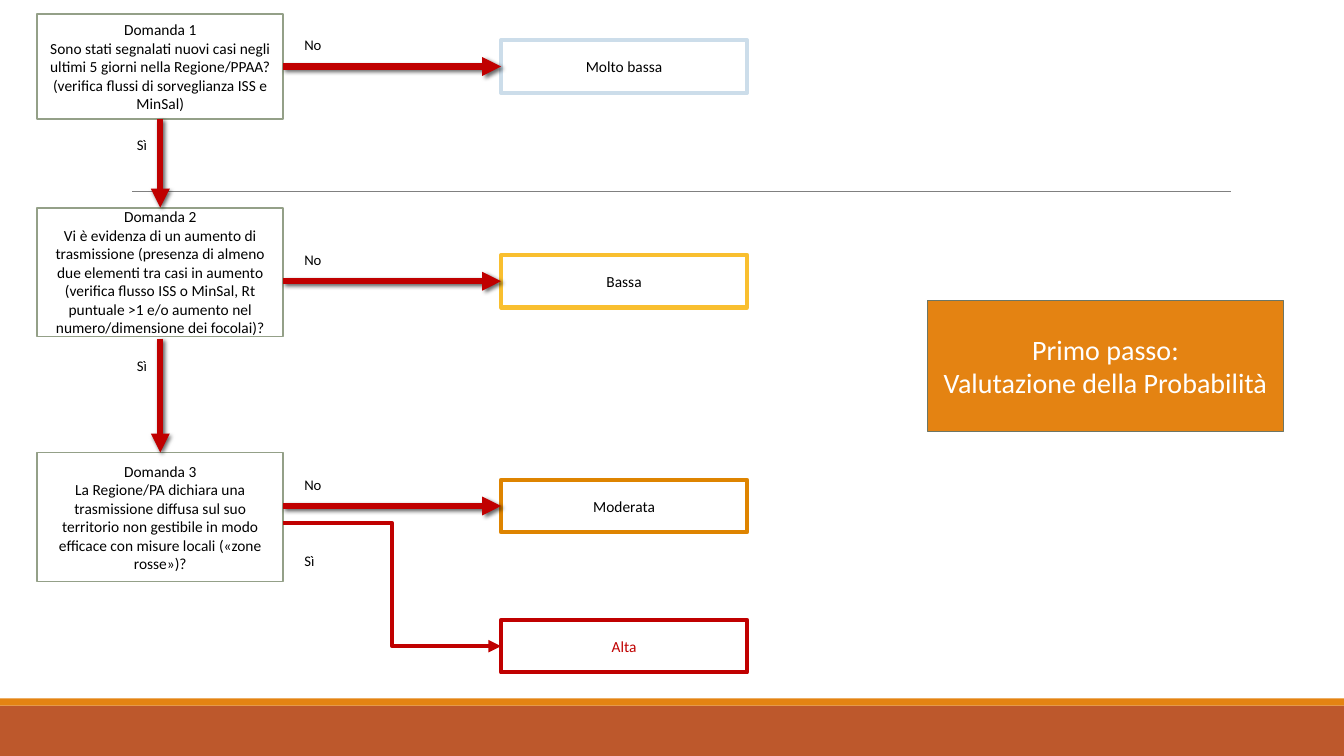
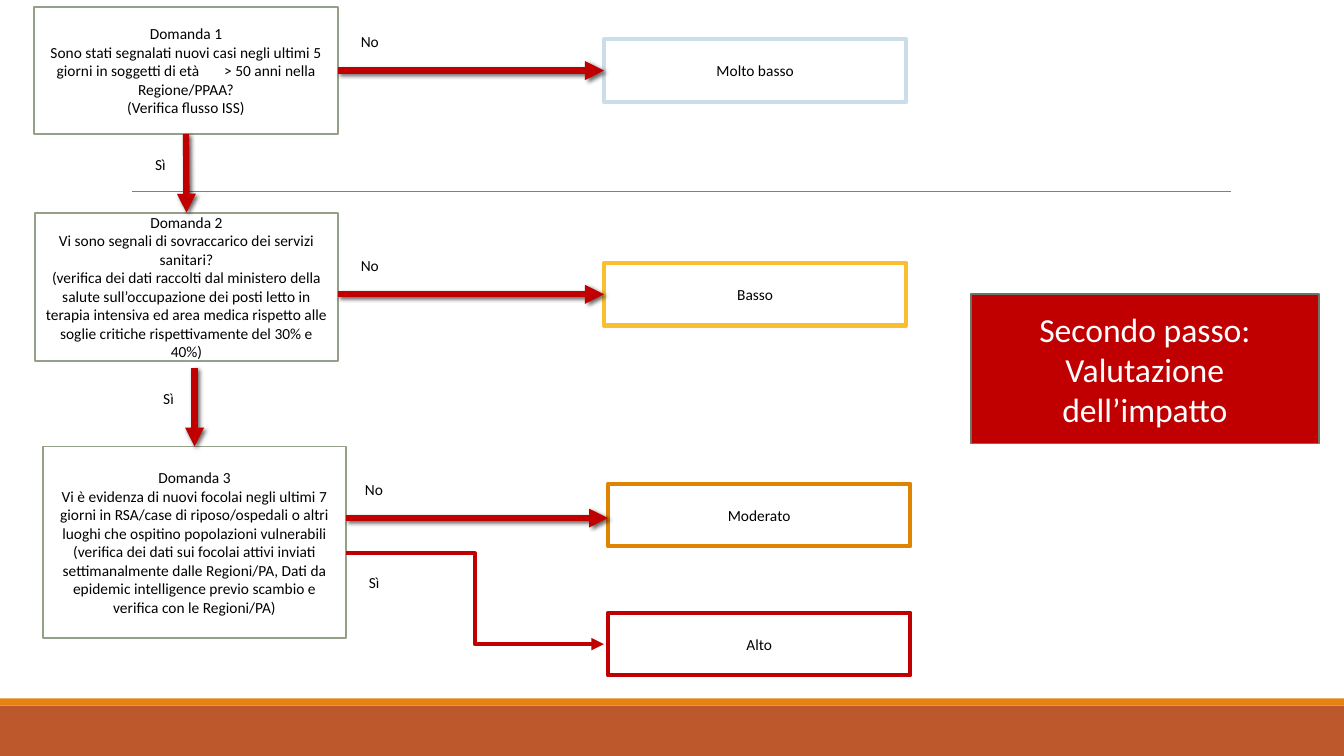
from lxml import etree
from pptx import Presentation
from pptx.dml.color import RGBColor
from pptx.enum.shapes import MSO_CONNECTOR as LINK, MSO_SHAPE as PRESET
from pptx.enum.text import MSO_ANCHOR as ANCHOR, MSO_AUTO_SIZE as FIT, PP_ALIGN as ALIGN
from pptx.oxml.ns import qn
from pptx.util import Emu, Pt

SCALE = 9144  # EMU in one px, 100 px to the inch
WIDTH, HEIGHT = 1333, 750
FONT = "Calibri"
GAP = " "  # a run of its own, widened by letter spacing
COLORS = {
    "white": "FFFFFF", "black": "000000", "red": "C00000",
    "orange": "E48312", "rust": "BD582C", "rule": "808080",
    "question": "94A088", "heading_edge": "6D7665",
    "very_low": "CCDDEA", "low": "F9BF2F", "moderate": "DE8400",
}
LEVELS = ("very_low", "low", "moderate", "red")

PROBABILITY = {
    "heading": {"box": (920, 298, 353, 130), "fill": "orange", "size": 20,
                "text": ("Primo passo:", "Valutazione della Probabilità")},
    "questions": (
        ((37, 14, 244, 104),
         ("Domanda 1",
          "Sono stati segnalati nuovi casi negli ultimi 5 giorni nella Regione/PPAA?",
          "(verifica flussi di sorveglianza ISS e MinSal)")),
        ((37, 206, 244, 128),
         ("Domanda 2",
          "Vi è evidenza di un aumento di trasmissione (presenza di almeno due elementi "
          "tra casi in aumento (verifica flusso ISS o MinSal, Rt puntuale >1 e/o aumento "
          "nel numero/dimensione dei focolai)?")),
        ((37, 449, 244, 128),
         ("Domanda 3",
          "La Regione/PA dichiara una trasmissione diffusa sul suo territorio non "
          "gestibile in modo efficace con misure locali («zone rosse»)?")),
    ),
    "answer_size": (244, 52),
    "answers": (("Molto bassa", 497, 40), ("Bassa", 497, 253),
                ("Moderata", 497, 476), ("Alta", 497, 615)),
    "last_color": "red",
    "no_arrows": (66, 279, 502),
    "yes_arrows": ((159, 118, 206), (159, 336, 449)),
    "elbow": (519, 497, 641),
    "label_size": 10.5,
    "no_labels": ((292, 31), (292, 244), (292, 467)),
    "yes_labels": ((126, 130), (126, 349), (292, 543)),
}

IMPACT = {
    "heading": {"box": (963, 292, 345, 148), "fill": "red", "size": 24,
                "text": ("Secondo passo:", "Valutazione dell’impatto")},
    "questions": (
        ((34, 7, 301, 126),
         ("Domanda 1",
          ("Sono stati segnalati nuovi casi negli ultimi 5 giorni in soggetti di età",
           GAP, "> 50 anni nella Regione/PPAA?"),
          "(Verifica flusso ISS)")),
        ((35, 211, 300, 147),
         ("Domanda 2",
          "Vi sono segnali di sovraccarico dei servizi sanitari?",
          "(verifica dei dati raccolti dal ministero della salute sull’occupazione dei "
          "posti letto in terapia intensiva ed area medica rispetto alle soglie critiche "
          "rispettivamente del 30% e 40%)")),
        ((43, 443, 300, 190),
         ("Domanda 3",
          "Vi è evidenza di nuovi focolai negli ultimi 7 giorni in RSA/case di "
          "riposo/ospedali o altri luoghi che ospitino popolazioni vulnerabili (verifica "
          "dei dati sui focolai attivi inviati settimanalmente dalle Regioni/PA, Dati da "
          "epidemic intelligence previo scambio e verifica con le Regioni/PA)")),
    ),
    "answer_size": (300, 62),
    "answers": (("Molto basso", 599, 39), ("Basso", 599, 261),
                ("Moderato", 603, 480), ("Alto", 603, 608)),
    "last_color": "black",
    "no_arrows": (70, 292, 514),
    "yes_arrows": ((185, 133, 211), (193, 365, 443)),
    "elbow": (549, 599, 639),
    "label_size": 11,
    "no_labels": ((348, 27), (348, 249), (352, 471)),
    "yes_labels": ((144, 149), (152, 381), (356, 564)),
}


def px(*lengths):
    return [Emu(round(length * SCALE)) for length in lengths]


def rgb(name):
    return RGBColor.from_string(COLORS[name])


# Basic parts
def paint(shape, fill, edge=None, weight=1.25):
    shape.fill.solid()
    shape.fill.fore_color.rgb = rgb(fill)
    if edge:
        shape.line.color.rgb = rgb(edge)
        shape.line.width = Pt(weight)
    else:
        shape.line.fill.background()


def write(frame, paragraphs, size, color="black", align=ALIGN.CENTER):
    for index, content in enumerate(paragraphs):
        paragraph = frame.add_paragraph() if index else frame.paragraphs[0]
        paragraph.alignment = align
        for words in (content,) if isinstance(content, str) else content:
            run = paragraph.add_run()
            run.text = words
            run.font.name, run.font.size = FONT, Pt(size)
            run.font.color.rgb = rgb(color)
            if words == GAP:
                run.font._element.set("spc", "1500")


def add_box(slide, box, fill, edge=None, weight=1.25, text=(), color="black"):
    panel = slide.shapes.add_shape(PRESET.RECTANGLE, *px(*box))
    panel.shadow.inherit = False
    paint(panel, fill, edge, weight)
    if text:
        panel.text_frame.word_wrap = True
        panel.text_frame.vertical_anchor = ANCHOR.MIDDLE
        write(panel.text_frame, text, 11, color)
    return panel


def add_line(slide, start, end, color, weight, kind=LINK.STRAIGHT, head=False, shadow=False):
    line = slide.shapes.add_connector(kind, *px(*start, *end))
    line.line.color.rgb = rgb(color)
    line.line.width = Pt(weight)
    properties = line._element.spPr
    if head:
        etree.SubElement(properties.find(qn("a:ln")), qn("a:tailEnd"), type="triangle")
    effects = etree.SubElement(properties, qn("a:effectLst"))
    if shadow:
        outer = etree.SubElement(effects, qn("a:outerShdw"), blurRad=str(Pt(3)),
                                 dist=str(Pt(2)), dir="2700000", rotWithShape="0")
        tint = etree.SubElement(outer, qn("a:srgbClr"), val=COLORS["black"])
        etree.SubElement(tint, qn("a:alpha"), val="60000")
    return line


def side_at(panel, point):
    """Number of the side whose middle lies at the point, if any."""
    left, top, width, height = panel.left, panel.top, panel.width, panel.height
    middles = ((left + width / 2, top), (left, top + height / 2),
               (left + width / 2, top + height), (left + width, top + height / 2))
    x, y = px(*point)
    for side, (mx, my) in enumerate(middles):
        if max(abs(mx - x), abs(my - y)) <= SCALE / 2 + 1:
            return side
    return None


def add_arrow(slide, start, end, source, target):
    arrow = add_line(slide, start, end, "red", 4.5, head=True, shadow=True)
    for panel, point, join in ((source, start, arrow.begin_connect),
                               (target, end, arrow.end_connect)):
        side = side_at(panel, point)
        if side is not None:
            join(panel, side)


def add_label(slide, word, place, width, size):
    label = slide.shapes.add_textbox(*px(*place, width, 29))
    label.text_frame.word_wrap = False
    label.text_frame.auto_size = FIT.SHAPE_TO_FIT_TEXT
    write(label.text_frame, (word,), size, align=ALIGN.LEFT)


# Bands and rule shared through the master
def set_master(master, slide):
    parts = (add_box(slide, (0, 700, WIDTH, 50), "rust"),
             add_box(slide, (0, 693, WIDTH, 7), "orange"),
             add_line(slide, (131, 190), (1221, 190), "rule", 0.5))
    for place, part in enumerate(parts, start=2):
        master.shapes.element.insert(place, part._element)


# Regions of a decision slide
def add_heading(slide, heading):
    title = slide.shapes.title
    title.left, title.top, title.width, title.height = px(*heading["box"])
    paint(title, heading["fill"], "heading_edge")
    frame = title.text_frame
    frame.word_wrap, frame.auto_size = True, FIT.NONE
    frame.vertical_anchor = ANCHOR.MIDDLE
    write(frame, heading["text"], heading["size"], "white")


def add_flow(slide, step):
    questions = [add_box(slide, box, "white", "question", text=text)
                 for box, text in step["questions"]]
    answers = []
    for (word, left, top), level in zip(step["answers"], LEVELS):
        color = step["last_color"] if level == LEVELS[-1] else "black"
        answers.append(add_box(slide, (left, top, *step["answer_size"]), "white",
                               level, 3, (word,), color))

    # "No" leads right to an answer, "Sì" down to the next question
    rights = [box[0] + box[2] for box, _ in step["questions"]]
    for index, y in enumerate(step["no_arrows"]):
        add_arrow(slide, (rights[index], y), (step["answers"][index][1], y),
                  questions[index], answers[index])
    for index, (x, top, bottom) in enumerate(step["yes_arrows"]):
        add_arrow(slide, (x, top), (x, bottom), questions[index], questions[index + 1])
    y, *end = step["elbow"]
    add_line(slide, (rights[-1], y), end, "red", 3, LINK.ELBOW, head=True)

    for word, width, places in (("No", 38, step["no_labels"]), ("Sì", 31, step["yes_labels"])):
        for place in places:
            add_label(slide, word, place, width, step["label_size"])


def main():
    deck = Presentation()
    deck.slide_width, deck.slide_height = px(WIDTH, HEIGHT)
    title_only = deck.slide_layouts.get_by_name("Title Only")
    for index, step in enumerate((PROBABILITY, IMPACT)):
        slide = deck.slides.add_slide(title_only)
        if index == 0:
            set_master(deck.slide_master, slide)
        add_heading(slide, step["heading"])
        add_flow(slide, step)
    deck.save("out.pptx")


if __name__ == "__main__":
    main()
